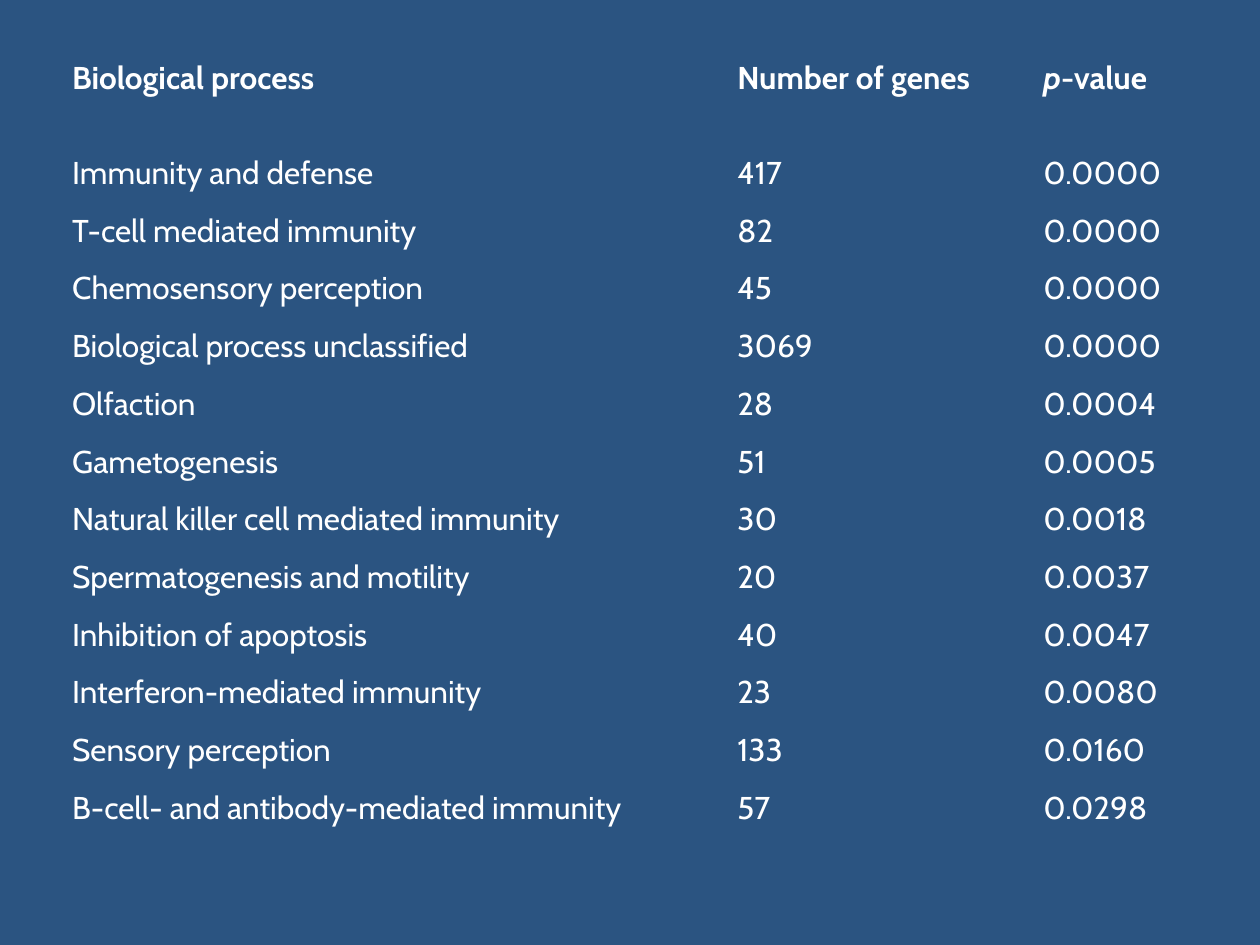
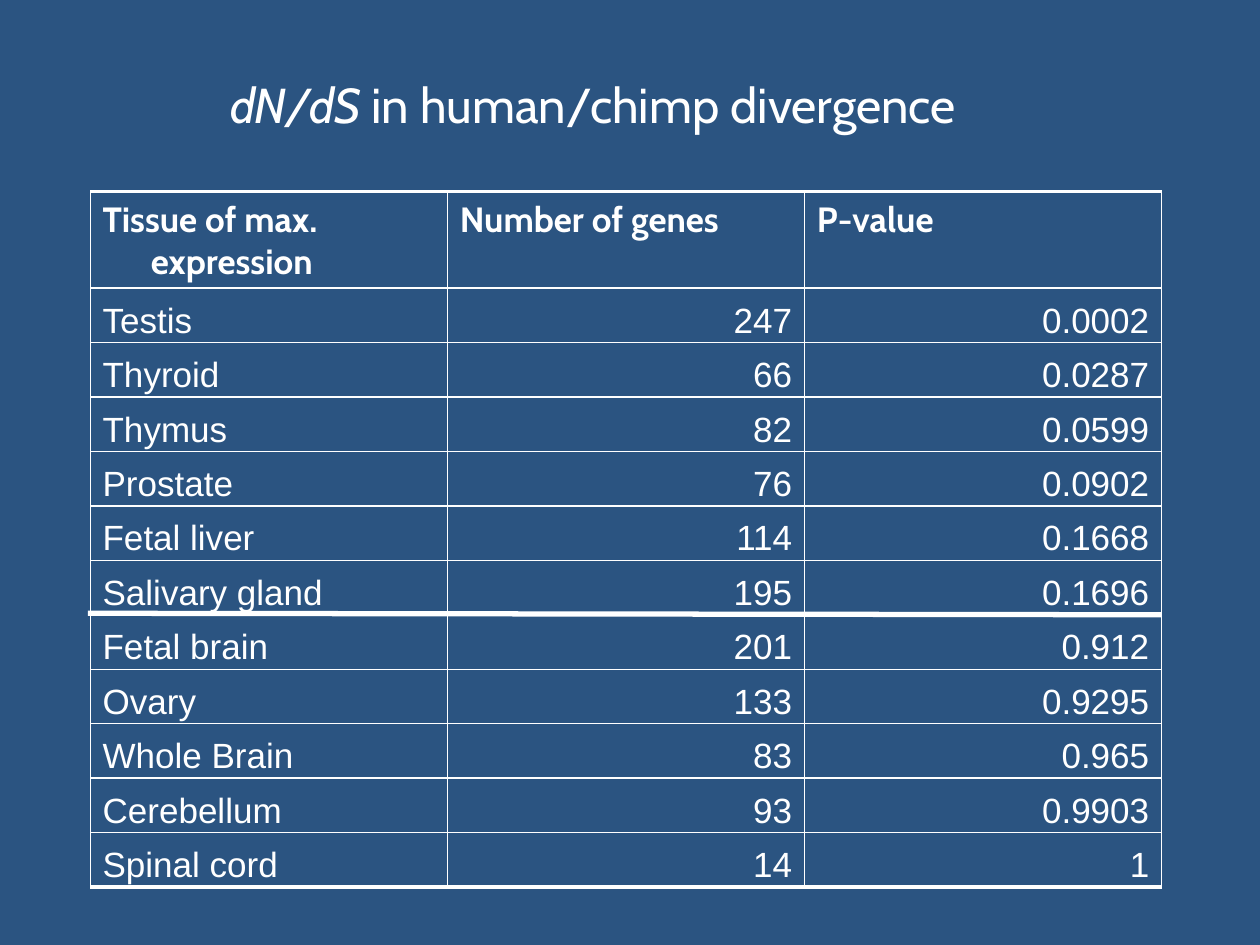
"""Build two slides of gene tables: biological processes and tissues."""
from dataclasses import dataclass

from lxml import etree
from pptx import Presentation
from pptx.dml.color import RGBColor
from pptx.enum.shapes import MSO_CONNECTOR, MSO_SHAPE
from pptx.enum.text import MSO_ANCHOR, MSO_AUTO_SIZE, PP_ALIGN
from pptx.oxml.ns import qn
from pptx.util import Cm, Pt

STRAIGHT = MSO_CONNECTOR.STRAIGHT
RECTANGLE = MSO_SHAPE.RECTANGLE
TOP = MSO_ANCHOR.TOP
GROW = MSO_AUTO_SIZE.SHAPE_TO_FIT_TEXT
LEFT, RIGHT = PP_ALIGN.LEFT, PP_ALIGN.RIGHT
BLANK_LAYOUT = 6


@dataclass(frozen=True)
class Theme:
    """Colours, fonts, type sizes and line widths of the deck."""
    background: RGBColor = RGBColor.from_string("2B5481")
    ink: RGBColor = RGBColor.from_string("FFFFFF")
    heading_font: str = "Cabin"
    number_font: str = "Arial"
    title_size: int = 28
    process_size: int = 18
    tissue_size: int = 20
    thin: float = 0.75
    frame: float = 2
    divider: float = 3
    hanging: float = 0.97


THEME = Theme()

PROCESS_HEADS = [
    [("Biological process", False)],
    [("Number of genes", False)],
    [("p", True), ("-value", False)],
]
PROCESSES = [
    ("Immunity and defense", "417", "0.0000"),
    ("T-cell mediated immunity", "82", "0.0000"),
    ("Chemosensory perception", "45", "0.0000"),
    ("Biological process unclassified", "3069", "0.0000"),
    ("Olfaction", "28", "0.0004"),
    ("Gametogenesis", "51", "0.0005"),
    ("Natural killer cell mediated immunity", "30", "0.0018"),
    ("Spermatogenesis and motility", "20", "0.0037"),
    ("Inhibition of apoptosis", "40", "0.0047"),
    ("Interferon-mediated immunity", "23", "0.0080"),
    ("Sensory perception", "133", "0.0160"),
    ("B-cell- and antibody-mediated immunity", "57", "0.0298"),
]
TISSUE_HEADS = ("Tissue of max. expression", "Number of genes", "P-value")
TISSUES = [
    ("Testis", "247", "0.0002"),
    ("Thyroid", "66", "0.0287"),
    ("Thymus", "82", "0.0599"),
    ("Prostate", "76", "0.0902"),
    ("Fetal liver", "114", "0.1668"),
    ("Salivary gland", "195", "0.1696"),
    ("Fetal brain", "201", "0.912"),
    ("Ovary", "133", "0.9295"),
    ("Whole Brain", "83", "0.965"),
    ("Cerebellum", "93", "0.9903"),
    ("Spinal cord", "14", "1"),
]


def add_spans(para, spans, size, font, bold=False):
    """Add (text, italic) spans to a paragraph."""
    for text, italic in spans:
        span = para.add_run()
        span.text = text
        span.font.size = Pt(size)
        span.font.name = font
        span.font.bold = bold
        span.font.italic = italic
        span.font.color.rgb = THEME.ink


def set_hanging_indent(para):
    """Let the first line of a paragraph hang out to the left."""
    properties = para._p.get_or_add_pPr()
    properties.set("marL", str(Cm(THEME.hanging)))
    properties.set("indent", str(-Cm(THEME.hanging)))


def clear_cell(cell):
    """Remove the borders and fill of a table cell."""
    properties = cell._tc.get_or_add_tcPr()
    for side in "LRTB":
        edge = etree.SubElement(properties, qn(f"a:ln{side}"))
        etree.SubElement(edge, qn("a:noFill"))
    cell.fill.background()


def add_process_table(page, left, top, widths, height, head_height):
    """Add the borderless table of biological processes."""
    table = page.shapes.add_table(len(PROCESSES) + 1, len(widths), Cm(left), Cm(top),
                                  Cm(sum(widths)), Cm(height)).table
    table.first_row = table.horz_banding = False
    for column, width in zip(table.columns, widths):
        column.width = Cm(width)
    row_height = (height - head_height) / len(PROCESSES)
    content = [PROCESS_HEADS] + [[[(text, False)] for text in row] for row in PROCESSES]
    for row_number, row in enumerate(content):
        is_head = row_number == 0
        table.rows[row_number].height = Cm(head_height if is_head else row_height)
        for column_number, spans in enumerate(row):
            cell = table.cell(row_number, column_number)
            clear_cell(cell)
            para = cell.text_frame.paragraphs[0]
            set_hanging_indent(para)
            add_spans(para, spans, THEME.process_size, THEME.heading_font, is_head)


def add_tissue_box(page, left, top, width, height, text, is_head, align):
    """Add one outlined box of the tissue grid."""
    box = page.shapes.add_shape(RECTANGLE, Cm(left), Cm(top), Cm(width), Cm(height))
    box.shadow.inherit = False
    box.fill.background()
    box.line.color.rgb = THEME.ink
    box.line.width = Pt(THEME.thin)
    frame = box.text_frame
    frame.word_wrap = True
    frame.vertical_anchor = TOP
    frame.margin_top = Cm(0.13 if is_head else 0.2)
    frame.margin_bottom = 0
    para = frame.paragraphs[0]
    para.alignment = align
    set_hanging_indent(para)
    font = THEME.heading_font if is_head else THEME.number_font
    add_spans(para, [(text, False)], THEME.tissue_size, font, is_head)


def add_rule(page, start, end, width):
    """Add a straight line without a shadow."""
    rule = page.shapes.add_connector(STRAIGHT, *map(Cm, start + end))
    rule.line.color.rgb = THEME.ink
    rule.line.width = Pt(width)
    etree.SubElement(rule._element.spPr, qn("a:effectLst"))


def add_tissue_grid(page, left, top, column_width, bottom, head_height):
    """Add the grid of tissues with its rules and the divider."""
    row_height = (bottom - top - head_height) / len(TISSUES)
    columns = [left + column_width * step for step in range(len(TISSUE_HEADS) + 1)]
    body = [top + head_height + row_height * step for step in range(len(TISSUES) + 1)]
    edges = [top] + body
    right = columns[-1]
    rows = [TISSUE_HEADS] + TISSUES
    for row_number, row in reversed(list(enumerate(rows))):
        is_head = row_number == 0
        height = head_height if is_head else row_height
        for column_number, text in reversed(list(enumerate(row))):
            align = LEFT if is_head or column_number == 0 else RIGHT
            add_tissue_box(page, columns[column_number], edges[row_number],
                           column_width, height, text, is_head, align)
    for edge in edges:
        width = THEME.frame if edge in (edges[0], edges[-1]) else THEME.thin
        add_rule(page, (left, edge), (right, edge), width)
    for column in columns:
        add_rule(page, (column, top), (column, bottom), THEME.thin)
    split = body[6]
    add_rule(page, (right, split), (left - 0.05, split - 0.03), THEME.divider)


def add_title(page, spans, left, top, width, height):
    """Add a slide title."""
    box = page.shapes.add_textbox(Cm(left), Cm(top), Cm(width), Cm(height))
    box.text_frame.word_wrap = True
    box.text_frame.auto_size = GROW
    add_spans(box.text_frame.paragraphs[0], spans, THEME.title_size, THEME.heading_font)


def add_page(deck):
    """Add a blank slide."""
    return deck.slides.add_slide(deck.slide_layouts[BLANK_LAYOUT])


def main():
    """Build and save the deck."""
    deck = Presentation()
    deck.slide_width, deck.slide_height = Cm(25.4), Cm(19.05)
    backdrop = deck.slide_master.background.fill
    backdrop.solid()
    backdrop.fore_color.rgb = THEME.background

    process_page = add_page(deck)
    add_process_table(process_page, 1.2, 1.07, (13.41, 6.17, 3.28), 15.87, 1.91)

    tissue_page = add_page(deck)
    add_tissue_grid(tissue_page, 1.82, 3.86, 7.2, 17.88, 1.95)
    add_title(tissue_page, [("dN/dS", True), (" in human/chimp divergence", False)],
              4.39, 1.37, 17.63, 1.45)
    deck.save("out.pptx")


if __name__ == "__main__":
    main()
